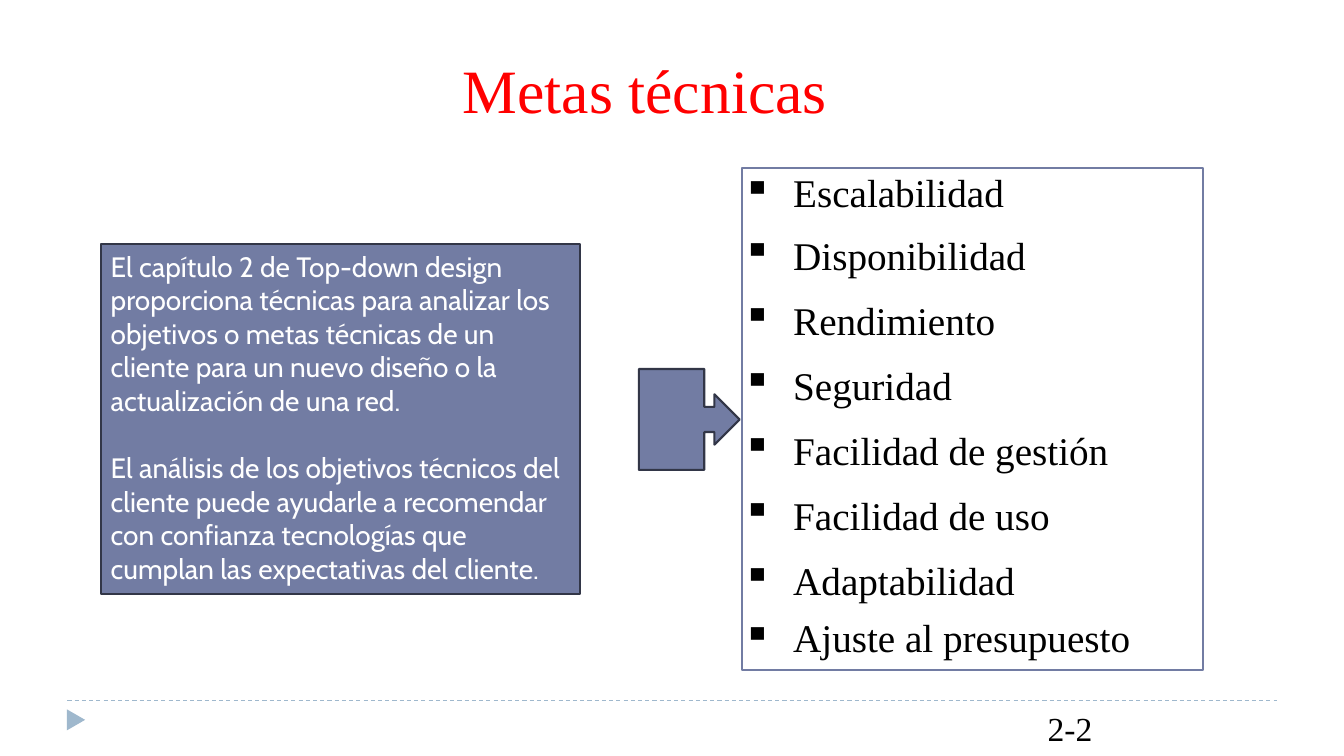
"""Build the slide on technical goals."""
import pptx
import pptx.util
from lxml import etree
from pptx.dml.color import RGBColor
from pptx.enum.dml import MSO_LINE
from pptx.enum.shapes import MSO_CONNECTOR, MSO_SHAPE
from pptx.enum.text import MSO_ANCHOR, MSO_AUTO_SIZE, PP_ALIGN
from pptx.oxml.ns import qn
from pptx.util import Cm, Pt

COLORS = {
    "title": "FF0000",
    "text": "000000",
    "light": "FFFFFF",
    "panel": "727CA3",
    "outline": "323647",
    "footer": "9FB8CD",
}
SERIF = "Times New Roman"
SANS = "Cabin"
SUMMARY = [
    "El capítulo 2 de Top-down design proporciona técnicas para analizar los "
    "objetivos o metas técnicas de un cliente para un nuevo diseño o la "
    "actualización de una red.",
    "El análisis de los objetivos técnicos del cliente puede ayudarle a "
    "recomendar con confianza tecnologías que cumplan las expectativas del cliente.",
]
GOALS = [
    ("Escalabilidad", Pt(33.7), 1.7),
    ("Disponibilidad", Pt(36.8), 7.9),
    ("Rendimiento", Pt(36.8), 9.6),
    ("Seguridad", Pt(36.8), 9.6),
    ("Facilidad de gestión", Pt(36.8), 9.8),
    ("Facilidad de uso", Pt(36.8), 9.6),
    ("Adaptabilidad", Pt(36.8), 9.6),
    ("Ajuste al presupuesto", 0.96, 9.8),
]


def color(name):
    """Return the named colour."""
    return RGBColor.from_string(COLORS[name])


def place(left, top, width, height):
    """Turn centimetres into lengths."""
    return [Cm(value) for value in (left, top, width, height)]


def add_figure(page, kind, frame, fill, line=None):
    """Add a filled preset shape, outlined if a line colour is given."""
    figure = page.shapes.add_shape(kind, *place(*frame))
    figure.shadow.inherit = False
    figure.fill.solid()
    figure.fill.fore_color.rgb = color(fill)
    if line:
        figure.line.color.rgb = color(line)
        figure.line.width = Pt(1.5)
    else:
        figure.line.fill.background()
    return figure


def clear_margins(frame):
    """Set the text against the edges and the top."""
    frame.margin_left = frame.margin_right = 0
    frame.margin_top = frame.margin_bottom = 0
    frame.word_wrap = True
    frame.vertical_anchor = MSO_ANCHOR.TOP


def write(frame, index, text, font, size, ink, before=0, spacing=None):
    """Write one left-aligned paragraph and return it."""
    para = frame.add_paragraph() if index else frame.paragraphs[0]
    para.alignment = PP_ALIGN.LEFT
    para.space_before = Pt(before)
    if spacing is not None:
        para.line_spacing = spacing
    span = para.add_run()
    span.text = text
    span.font.name = font
    span.font.size = Pt(size)
    span.font.color.rgb = color(ink)
    return para


def add_bullet(para):
    """Give a paragraph a square bullet with a hanging indent."""
    properties = para._p.get_or_add_pPr()
    properties.set("marL", str(Cm(1.3)))
    properties.set("indent", str(Cm(-1.27)))
    bullet = etree.SubElement(properties, qn("a:buChar"))
    bullet.set("char", "▪")


def add_label(page, frame, text, size, ink, before, spacing):
    """Add a one-line serif label."""
    box = page.shapes.add_textbox(*place(*frame))
    clear_margins(box.text_frame)
    write(box.text_frame, 0, text, SERIF, size, ink, before, Pt(spacing))


def add_footer(page):
    """Add the dashed rule and the small triangle below it."""
    rule = page.shapes.add_connector(
        MSO_CONNECTOR.STRAIGHT, Cm(1.7), Cm(17.65), Cm(32.18), Cm(17.65))
    rule.line.color.rgb = color("footer")
    rule.line.width = Pt(0.75)
    rule.line.dash_style = MSO_LINE.DASH
    etree.SubElement(rule._element.spPr, qn("a:effectLst"))
    marker = add_figure(
        page, MSO_SHAPE.ISOSCELES_TRIANGLE, (1.65, 17.91, 0.53, 0.46), "footer")
    marker.rotation = 90


def add_goals(page):
    """Add the framed list of goals."""
    box = add_figure(
        page, MSO_SHAPE.RECTANGLE, (18.69, 4.24, 11.63, 12.65), "light", "panel")
    clear_margins(box.text_frame)
    for index, (goal, spacing, before) in enumerate(GOALS):
        add_bullet(write(
            box.text_frame, index, goal, SERIF, 28, "text", before, spacing))


def add_summary(page):
    """Add the panel that sums up the chapter."""
    box = add_figure(
        page, MSO_SHAPE.RECTANGLE, (2.54, 6.15, 12.07, 8.81), "panel", "outline")
    frame = box.text_frame
    frame.word_wrap = True
    frame.vertical_anchor = MSO_ANCHOR.TOP
    frame.auto_size = MSO_AUTO_SIZE.SHAPE_TO_FIT_TEXT
    for index, text in enumerate(SUMMARY):
        write(frame, index, text, SANS, 20, "light", 24 * index)


def main():
    """Build and save the deck."""
    deck = pptx.Presentation()
    deck.slide_width = Cm(33.87)
    deck.slide_height = Cm(19.05)
    page = deck.slides.add_slide(deck.slide_layouts[6])
    add_footer(page)
    add_label(page, (11.66, 1.55, 9.93, 1.63), "Metas técnicas", 44, "title", 2.3, 46)
    add_goals(page)
    add_label(page, (26.4, 17.96, 1.3, 0.91), "2-2", 24, "text", 1.3, 25.5)
    add_summary(page)
    add_figure(page, MSO_SHAPE.RIGHT_ARROW_CALLOUT, (16.1, 9.3, 2.54, 2.54),
               "panel", "outline")
    deck.save("out.pptx")


if __name__ == "__main__":
    main()
